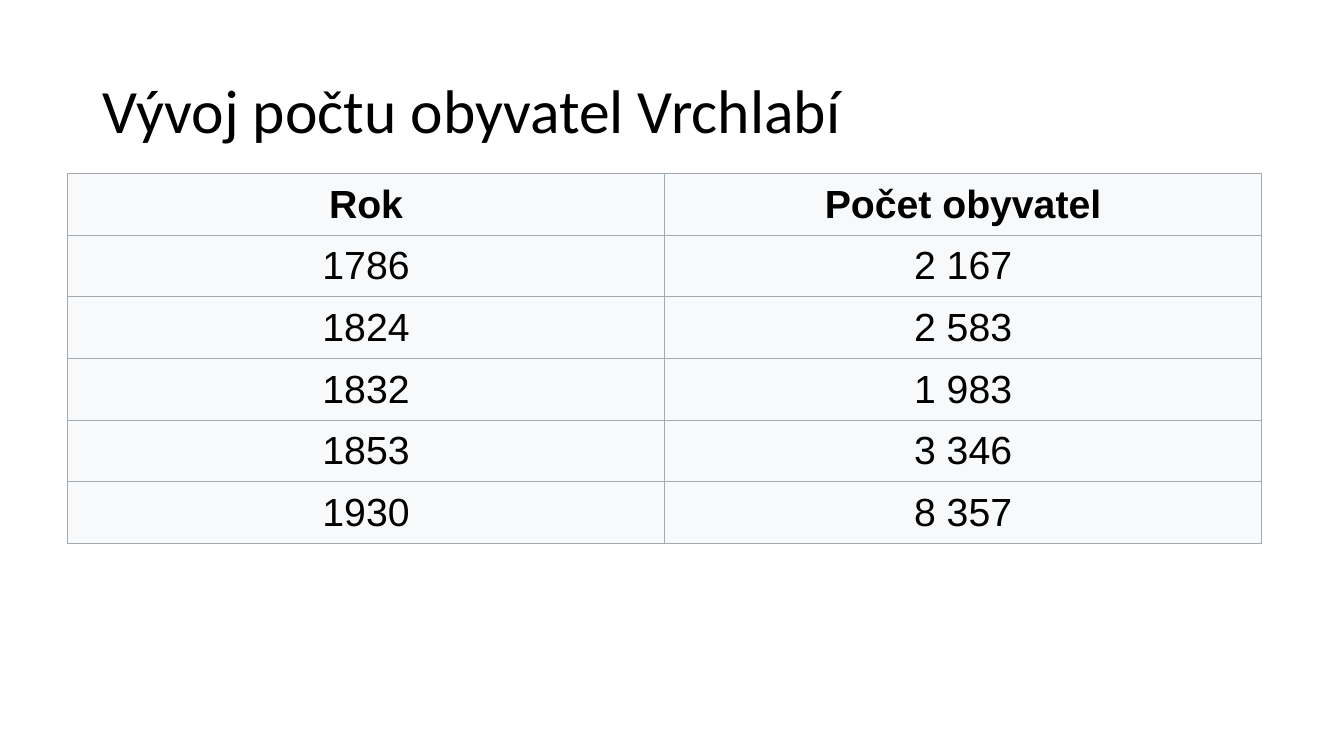
from lxml import etree
from pptx import Presentation
from pptx.dml.color import RGBColor
from pptx.enum import text as t
from pptx.oxml import ns
from pptx.util import Pt

BLACK = RGBColor(0x00, 0x00, 0x00)
CELL_FILL = RGBColor(0xF8, 0xF9, 0xFA)
BORDER = RGBColor(0xA2, 0xA9, 0xB1)

POPULATION = [
    ("Rok", "Počet obyvatel"),
    ("1786", "2 167"),
    ("1824", "2 583"),
    ("1832", "1 983"),
    ("1853", "3 346"),
    ("1930", "8 357"),
]
COLUMN_WIDTH = Pt(426.5)
ROW_HEIGHT = Pt(44.06)


def format_font(font, name, size, bold=False):
    """Set the typeface, size and weight of black text."""
    font.name, font.size, font.bold = name, Pt(size), bold
    font.color.rgb = BLACK


def set_title(page, wording):
    """Fill and place the title placeholder."""
    title = page.shapes.title
    title.left, title.top, title.width, title.height = Pt(66), Pt(28.8), Pt(828), Pt(104.4)
    frame = title.text_frame
    frame.text = wording
    frame.auto_size = t.MSO_AUTO_SIZE.NONE
    frame.vertical_anchor = t.MSO_ANCHOR.MIDDLE
    para = frame.paragraphs[0]
    para.alignment = t.PP_ALIGN.LEFT
    para.line_spacing = 0.9
    format_font(para.runs[0].font, "Calibri", 44)


def add_borders(cell):
    """Draw a thin line on all four sides of a cell."""
    properties = cell._tc.get_or_add_tcPr()
    for side in ("lnL", "lnR", "lnT", "lnB"):
        line = etree.SubElement(properties, ns.qn(f"a:{side}"), w=str(Pt(0.75)))
        fill = etree.SubElement(line, ns.qn("a:solidFill"))
        etree.SubElement(fill, ns.qn("a:srgbClr"), val=str(BORDER))


def format_cell(cell, wording, bold):
    """Write one centred table cell with its border and fill."""
    cell.text = wording
    cell.vertical_anchor = t.MSO_ANCHOR.MIDDLE
    para = cell.text_frame.paragraphs[0]
    para.alignment = t.PP_ALIGN.CENTER
    format_font(para.runs[0].font, "Arial", 28, bold)
    add_borders(cell)
    cell.fill.solid()
    cell.fill.fore_color.rgb = CELL_FILL


def add_population_table(page, rows):
    """Add the table of years and inhabitants."""
    columns = len(rows[0])
    table = page.shapes.add_table(
        len(rows), columns, Pt(48.2), Pt(124),
        COLUMN_WIDTH * columns, ROW_HEIGHT * len(rows)).table
    table.horz_banding = False
    for column in table.columns:
        column.width = COLUMN_WIDTH
    for row_index, row in enumerate(rows):
        table.rows[row_index].height = ROW_HEIGHT
        for column_index, wording in enumerate(row):
            format_cell(table.cell(row_index, column_index), wording, row_index == 0)


def main():
    """Build the slide and save it."""
    deck = Presentation()
    deck.slide_width, deck.slide_height = Pt(960), Pt(540)
    page = deck.slides.add_slide(deck.slide_layouts.get_by_name("Title Only"))
    set_title(page, "Vývoj počtu obyvatel Vrchlabí")
    add_population_table(page, POPULATION)
    deck.save("out.pptx")


if __name__ == "__main__":
    main()
